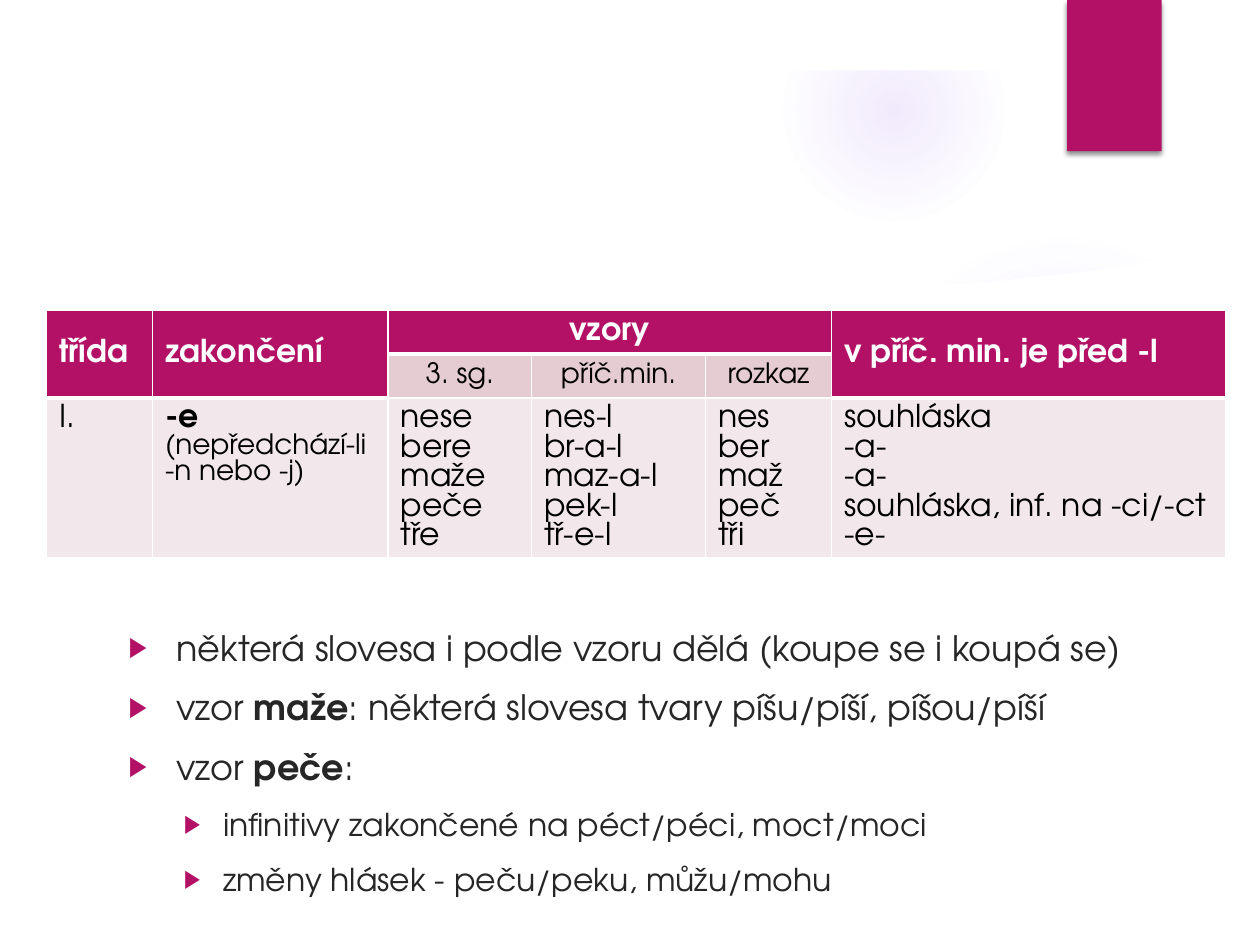
from lxml.etree import SubElement
from pptx import Presentation
from pptx.dml.color import RGBColor
from pptx.enum.shapes import MSO_SHAPE as Kind
from pptx.enum.text import MSO_ANCHOR as Anchor, MSO_AUTO_SIZE as Auto, PP_ALIGN as Align
from pptx.oxml import parse_xml
from pptx.oxml.ns import qn
from pptx.util import Inches, Pt

FONT = "TeX Gyre Adventor"
NS = 'xmlns:a="http://schemas.openxmlformats.org/drawingml/2006/main"'
HUE = {"pink": "B31166", "rose": "E5CCD3", "pale": "F2E7EA", "glow": "9B6BF2",
       "white": "FFFFFF", "black": "000000", "dark": "262626"}

# Content: asterisks enclose bold words
HEAD = ["třída", "zakončení", "vzory", None, None, "v příč. min. je před -l"]
SUB = [None, None, "3. sg.", "příč.min.", "rozkaz", None]
ROW = [
    ["I."],
    ["*-e*", "(nepředchází-li -n nebo -j)"],
    ["nese", "bere", "maže", "peče", "tře"],
    ["nes-l", "br-a-l", "maz-a-l", "pek-l", "tř-e-l"],
    ["nes", "ber", "maž", "peč", "tři"],
    ["souhláska", "-a-", "-a-", "souhláska, inf. na -ci/-ct", "-e-"],
]
NOTES = [
    (0, "některá slovesa i podle vzoru dělá (koupe se i koupá se)"),
    (0, "vzor *maže*: některá slovesa tvary píšu/píší, píšou/píší"),
    (0, "vzor *peče*:"),
    (1, "infinitivy zakončené na péct/péci, moct/moci"),
    (1, "změny hlásek - peču/peku, můžu/mohu"),
]
LEVELS = [(20, 0.38, 0.38), (18, 0.75, 0.31)]  # size, margin, hanging

# Layout
COLS = [0.84, 1.87, 1.14, 1.38, 1, 3.13]
ROWS = [0.35, 0.35, 0.41]
TALL = (0, 1, 5)  # columns whose heading spans two rows
GLOWS = [  # left, top, size, stops of (position, alpha)
    (6.89, 1.83, 3.08, [(0, 7), (36, 6), (69, 0)]),
    (6.22, 0, 1.75, [(0, 14), (36, 7), (73, 0)]),
]
SLIVER = [(6.99, 2.34), (7.9, 2.31), (8.8, 2.2), (9.56, 2.08), (9.51, 1.74),
          (8.92, 1.92), (8.34, 2.06), (7.77, 2.18), (7.1, 2.28), (6.96, 2.29)]
SHEET = [(0.53, 2.03), (0.53, 6.99), (9.47, 6.99), (9.47, 2.03), (8.66, 2.15),
         (7.85, 2.24), (7.04, 2.29), (6.25, 2.33), (5.48, 2.34), (4.39, 2.34),
         (3.38, 2.3), (2.49, 2.24), (1.73, 2.17), (0.99, 2.09)]
FRAME = [(0, 0), (0, 7.5), (10, 7.5), (10, 0)]
HOLE = [(9.45, 6.95), (9.45, 0.56), (0.56, 0.56), (0.56, 6.95)]


def write(para, text, size=18, hue="black", bold=False, align=None):
    para.alignment = align
    for i, part in enumerate(text.split("*")):
        if part:
            run = para.add_run()
            run.text = part
            font = run.font
            font.name, font.size, font.bold = FONT, Pt(size), bold or i % 2 == 1
            font.color.rgb = RGBColor.from_string(HUE[hue])


def paint(shape, hue):
    shape.shadow.inherit = False
    shape.fill.solid()
    shape.fill.fore_color.rgb = RGBColor.from_string(HUE[hue])
    shape.line.fill.background()


def outline(shapes, *loops):
    pen = None
    for loop in loops:
        pts = [(Inches(x), Inches(y)) for x, y in loop]
        if pen is None:
            pen = shapes.build_freeform(*pts[0])
        else:
            pen.move_to(*pts[0])
        pen.add_line_segments(pts[1:], close=True)
    shape = pen.convert_to_shape()
    paint(shape, "white")
    return shape


def glow(shapes, left, top, size, stops):
    disc = shapes.add_shape(Kind.OVAL, *map(Inches, (left, top, size, size)))
    paint(disc, "glow")
    marks = "".join(f'<a:gs pos="{pos * 1000}"><a:srgbClr val="{HUE["glow"]}">'
                    f'<a:alpha val="{alpha * 1000}"/></a:srgbClr></a:gs>'
                    for pos, alpha in stops)
    grad = parse_xml(f'<a:gradFill {NS} rotWithShape="1"><a:gsLst>{marks}</a:gsLst>'
                     '<a:path path="circle"><a:fillToRect l="50000" t="50000" '
                     'r="50000" b="50000"/></a:path></a:gradFill>')
    props = disc.element.spPr
    props.replace(props.find(qn("a:solidFill")), grad)


def bullet(para, margin, hang):
    props = para._p.get_or_add_pPr()
    props.set("marL", str(Inches(margin)))
    props.set("indent", str(-Inches(hang)))
    for xml in (f'<a:buClr {NS}><a:srgbClr val="{HUE["pink"]}"/></a:buClr>',
                f'<a:buSzPct {NS} val="80000"/>',
                f'<a:buFont {NS} typeface="Arial"/>',
                f'<a:buChar {NS} char="▶"/>'):
        props.append(parse_xml(xml))


def edge(cell, top, low):
    props = cell._tc.get_or_add_tcPr()
    for i, (side, width) in enumerate(zip("LRTB", (1, 1, top, low))):
        line = parse_xml(f'<a:ln{side} {NS} w="{Pt(width)}"><a:solidFill>'
                         f'<a:srgbClr val="{HUE["white"]}"/></a:solidFill></a:ln{side}>')
        props.insert(i, line)


def style(cell, paras, fill, **form):
    cell.fill.solid()
    cell.fill.fore_color.rgb = RGBColor.from_string(HUE[fill])
    frame = cell.text_frame
    for i, text in enumerate(paras):
        para = frame.add_paragraph() if i else frame.paragraphs[0]
        size = 16 if text.startswith("(") else form.get("size", 18)
        write(para, text, **{**form, "size": size})


def grid(shapes):
    box = map(Inches, (0.37, 2.46, sum(COLS), 2.37))
    table = shapes.add_table(len(ROWS), len(COLS), *box).table
    for col, width in zip(table.columns, COLS):
        col.width = Inches(width)
    for row, height in zip(table.rows, ROWS):
        row.height = Inches(height)
    for c in TALL:
        table.cell(0, c).merge(table.cell(1, c))
    table.cell(0, 2).merge(table.cell(0, 4))
    for c in range(len(COLS)):
        top, mid, low = (table.cell(r, c) for r in range(3))
        tall = c in TALL
        if HEAD[c]:
            style(top, [HEAD[c]], "pink", hue="white", bold=True,
                  align=None if tall else Align.CENTER)
        if SUB[c]:
            style(mid, [SUB[c]], "rose", size=16, align=Align.CENTER)
        style(low, ROW[c], "pale")
        top.vertical_anchor = mid.vertical_anchor = Anchor.MIDDLE
        edge(top, 1, 3)
        edge(mid, 3, 3 if tall else 1)
        edge(low, 3 if tall else 1, 1)


def main():
    deck = Presentation()
    deck.slide_width, deck.slide_height = Inches(10), Inches(7.5)
    slide = deck.slides.add_slide(deck.slide_layouts[1])
    shapes = slide.shapes
    title, body = slide.placeholders
    title.element.getparent().remove(title.element)

    # Soft glows behind white masks
    for spot in GLOWS:
        glow(shapes, *spot)
    sliver = outline(shapes, SLIVER)
    sliver.rotation = 350.2
    tint = sliver.element.spPr.find(qn("a:solidFill"))[0]
    SubElement(tint, qn("a:alpha")).set("val", "20000")
    outline(shapes, SHEET)
    outline(shapes, FRAME, HOLE)

    # Corner tab with a shadow
    tab = shapes.add_shape(Kind.RECTANGLE, *map(Inches, (8.47, 0, 0.75, 1.2)))
    paint(tab, "pink")
    shade = tab.element.spPr.find(qn("a:effectLst"))
    shade.append(parse_xml(
        f'<a:outerShdw {NS} blurRad="{Pt(3)}" dist="{Pt(2)}" dir="5400000" rotWithShape="0">'
        f'<a:srgbClr val="{HUE["black"]}"><a:alpha val="45000"/></a:srgbClr></a:outerShdw>'))

    # Notes, brought in front of the masks
    shapes._spTree.append(body.element)
    body.left, body.top, body.width, body.height = map(Inches, (0.92, 4.92, 8.26, 2.58))
    frame = body.text_frame
    frame.auto_size, frame.vertical_anchor = Auto.NONE, Anchor.TOP
    for i, (level, text) in enumerate(NOTES):
        para = frame.add_paragraph() if i else frame.paragraphs[0]
        size, margin, hang = LEVELS[level]
        para.level = level
        bullet(para, margin, hang)
        para.space_before = Pt(10 if i else 0)
        write(para, text, size=size, hue="dark")

    # Verb table
    grid(shapes)
    deck.save("out.pptx")


if __name__ == "__main__":
    main()
